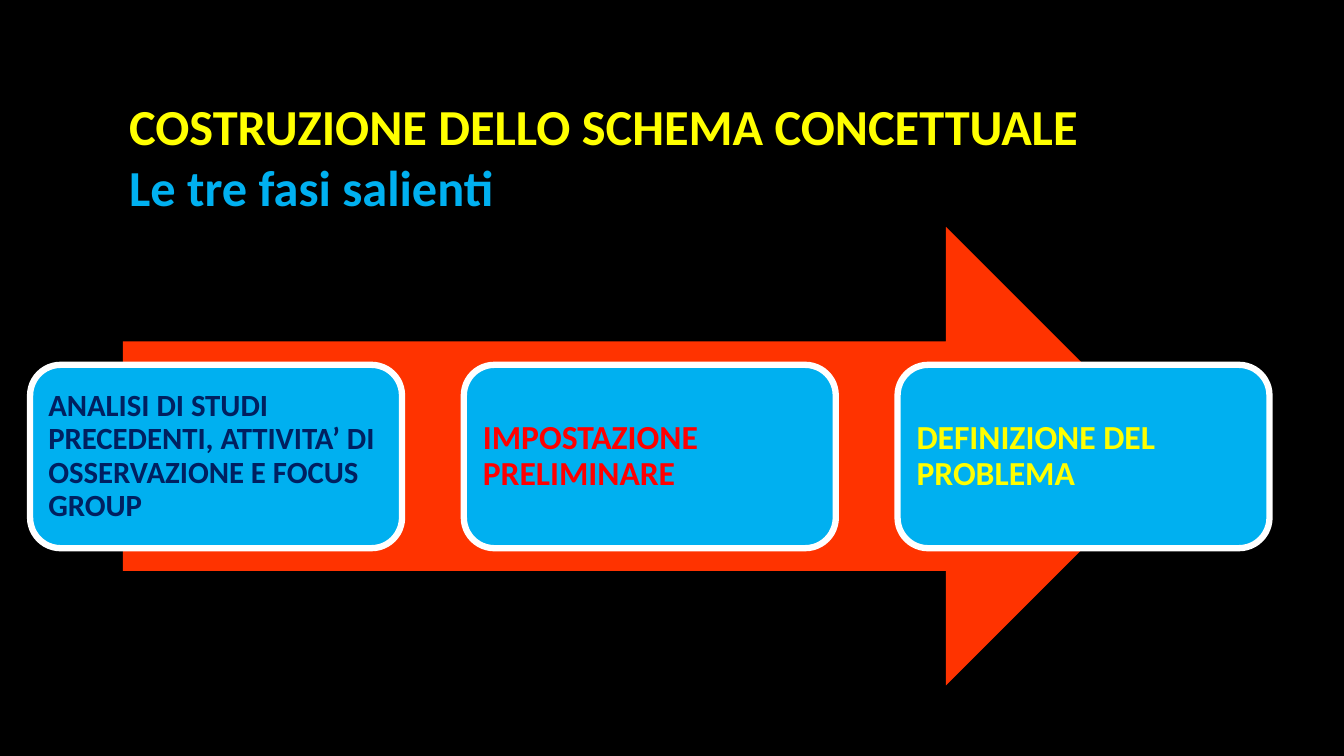
from pptx import Presentation
from pptx.dml.color import RGBColor
from pptx.enum.shapes import MSO_SHAPE as Shape
from pptx.enum.text import MSO_ANCHOR as Anchor, MSO_AUTO_SIZE as AutoSize, PP_ALIGN as Align
from pptx.util import Pt

FONT = "Calibri"
YELLOW, SKY, WHITE = "FFFF00", "00B0F0", "FFFFFF"

PHASES = [
    ("ANALISI DI STUDI PRECEDENTI, ATTIVITA’ DI OSSERVAZIONE E FOCUS GROUP", 22, "002060"),
    ("IMPOSTAZIONE PRELIMINARE", 24, "FF0000"),
    ("DEFINIZIONE DEL PROBLEMA", 24, YELLOW),
]
PHASE_LEFT, PHASE_TOP, PHASE_STEP = 21.5, 260.6, 309.8
PHASE_WIDTH, PHASE_HEIGHT = 265.7, 131


def color(value):
    return RGBColor.from_string(value)


def add_text(paragraph, text, *, size, fill, bold=True, spacing=1.0):
    paragraph.alignment = Align.LEFT
    paragraph.line_spacing = spacing
    run = paragraph.add_run()
    run.text = text
    run.font.name = FONT
    run.font.size = Pt(size)
    run.font.bold = bold
    run.font.color.rgb = color(fill)


def add_block(slide, kind, left, top, width, height, fill, line=None):
    """Add a flat preset shape, outlined only when a line colour is given."""
    shape = slide.shapes.add_shape(kind, Pt(left), Pt(top), Pt(width), Pt(height))
    shape.shadow.inherit = False
    shape.fill.solid()
    shape.fill.fore_color.rgb = color(fill)
    if line:
        shape.line.color.rgb = color(line)
        shape.line.width = Pt(4.5)
    else:
        shape.line.fill.background()
    return shape


def add_title(slide):
    title = slide.shapes.title
    title.left, title.top, title.width, title.height = Pt(85), Pt(60.5), Pt(821), Pt(101.5)
    frame = title.text_frame
    frame.auto_size = AutoSize.NONE
    frame.word_wrap = True
    frame.vertical_anchor = Anchor.MIDDLE
    paragraph = frame.paragraphs[0]
    add_text(paragraph, "COSTRUZIONE DELLO SCHEMA CONCETTUALE", size=36, fill=YELLOW)
    paragraph.add_line_break()
    add_text(paragraph, "Le tre fasi salienti", size=36, fill=SKY)


def add_phase(slide, index, text, size, fill):
    box = add_block(slide, Shape.ROUNDED_RECTANGLE, PHASE_LEFT + index * PHASE_STEP,
                    PHASE_TOP, PHASE_WIDTH, PHASE_HEIGHT, SKY, line=WHITE)
    frame = box.text_frame
    frame.word_wrap = True
    frame.vertical_anchor = Anchor.MIDDLE
    inset = Pt(size * 0.3)
    frame.margin_left = frame.margin_right = inset
    frame.margin_top = frame.margin_bottom = inset
    add_text(frame.paragraphs[0], text, size=size, fill=fill, spacing=0.9)


def main():
    presentation = Presentation()
    presentation.slide_width, presentation.slide_height = Pt(960), Pt(540)
    slide = presentation.slides.add_slide(presentation.slide_layouts[5])
    slide.background.fill.solid()
    slide.background.fill.fore_color.rgb = color("000000")

    add_title(slide)
    add_block(slide, Shape.RIGHT_ARROW, 87.8, 162, 751.7, 327.6, "FF3300")
    for index, phase in enumerate(PHASES):
        add_phase(slide, index, *phase)
    presentation.save("out.pptx")


if __name__ == "__main__":
    main()
